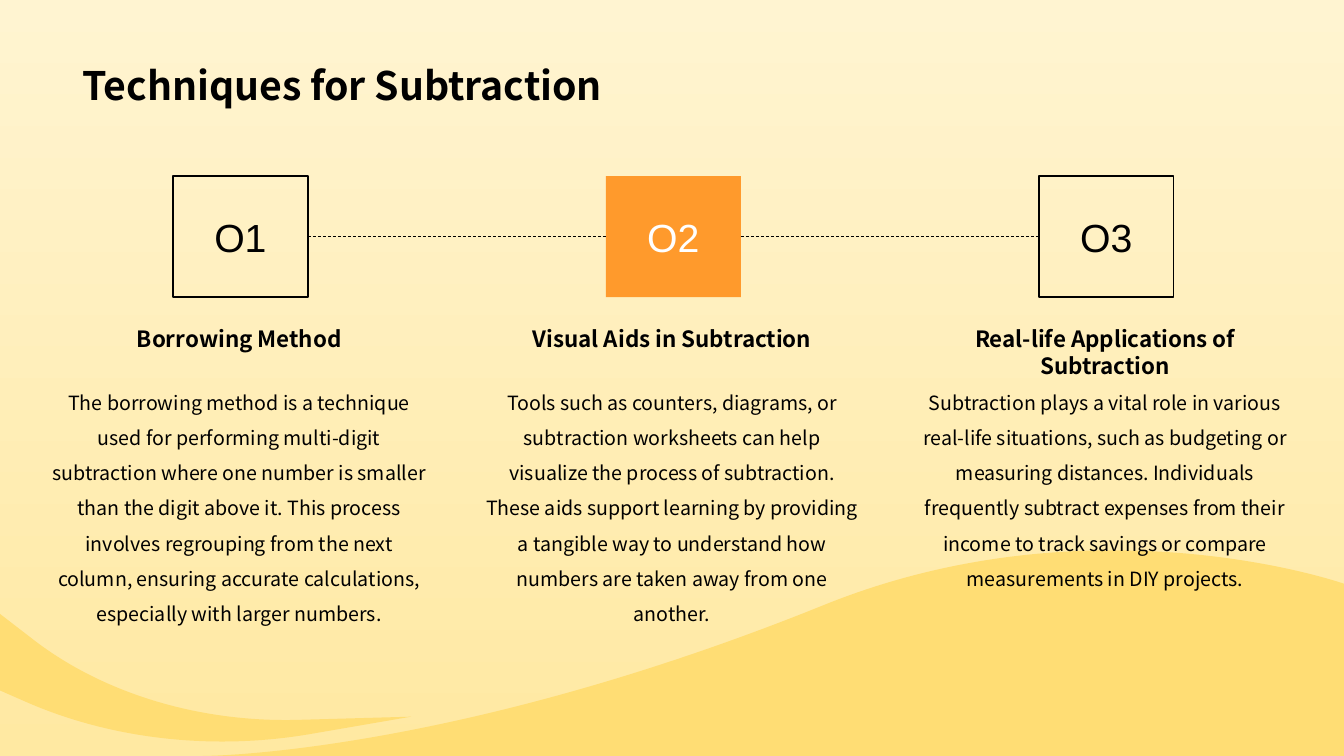
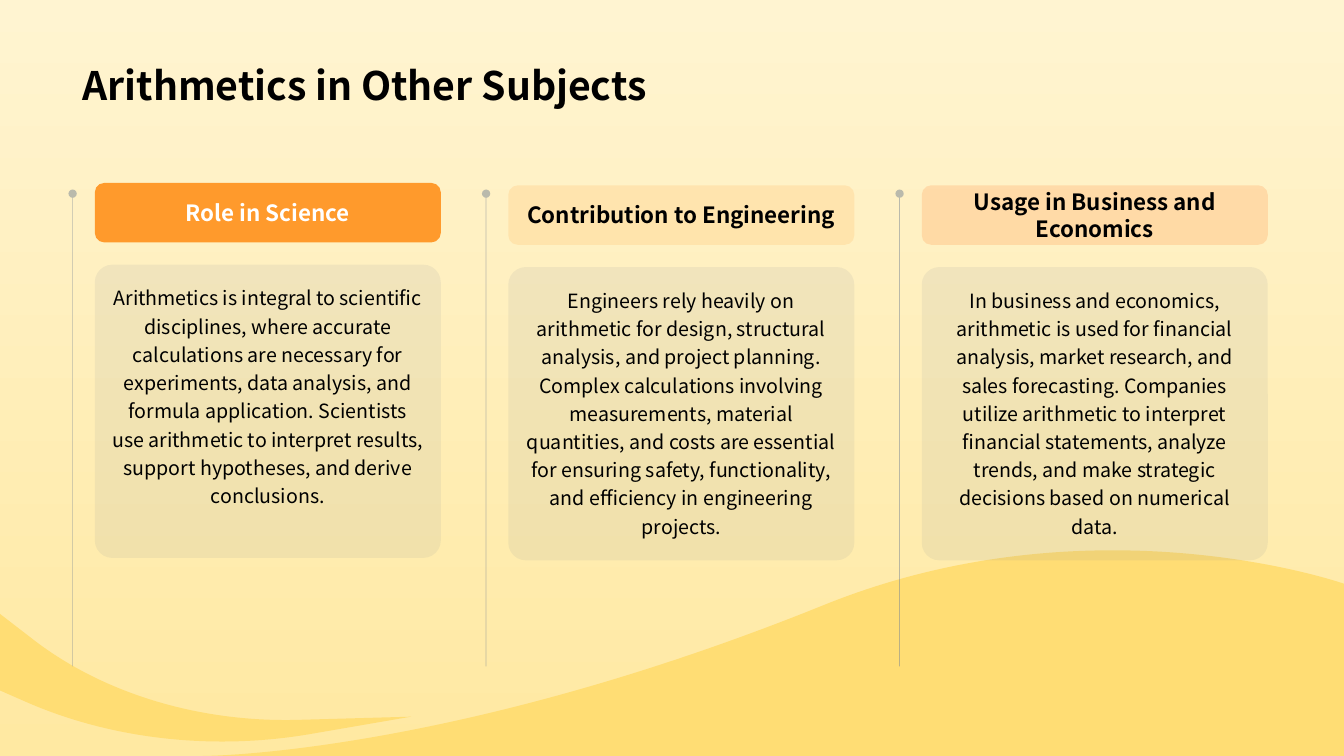
from pptx import Presentation
from pptx.dml.color import RGBColor
from pptx.enum.dml import MSO_LINE
from pptx.enum.shapes import MSO_CONNECTOR, MSO_SHAPE
from pptx.enum.text import MSO_ANCHOR, MSO_AUTO_SIZE, PP_ALIGN
from pptx.oxml.ns import qn
from pptx.util import Cm, Pt
from lxml.etree import SubElement

# Colours and text formats
BLACK = RGBColor(0x00, 0x00, 0x00)
WHITE = RGBColor(0xFF, 0xFF, 0xFF)
ORANGE = RGBColor(0xFF, 0x9A, 0x2C)
RED_ORANGE = RGBColor(0xFF, 0x59, 0x00)
SLATE = RGBColor(0x77, 0x84, 0x95)
WAVE = RGBColor(0xFF, 0xDD, 0x74)
SKY_BOTTOM = RGBColor(0xFF, 0xE9, 0xA2)
SKY_TOP = RGBColor(0xFF, 0xF4, 0xD1)

SANS = "Noto Sans CJK SC"
TITLE = {"name": SANS, "size": Pt(28), "bold": True}
NUMBER = {"name": "Arial", "size": Pt(28), "bold": False}
HEADING = {"name": SANS, "size": Pt(16), "bold": True}
BODY = {"name": SANS, "size": Pt(14), "bold": False}

# Content: heading, text, number, number box fill
TECHNIQUES_TITLE = "Techniques for Subtraction"
TECHNIQUES = [
    ("Borrowing Method",
     "The borrowing method is a technique used for performing multi-digit "
     "subtraction where one number is smaller than the digit above it. This "
     "process involves regrouping from the next column, ensuring accurate "
     "calculations, especially with larger numbers.", "O1", None),
    ("Visual Aids in Subtraction",
     "Tools such as counters, diagrams, or subtraction worksheets can help "
     "visualize the process of subtraction. These aids support learning by "
     "providing a tangible way to understand how numbers are taken away from "
     "one another.", "O2", ORANGE),
    ("Real-life Applications of Subtraction",
     "Subtraction plays a vital role in various real-life situations, such as "
     "budgeting or measuring distances. Individuals frequently subtract "
     "expenses from their income to track savings or compare measurements in "
     "DIY projects.", "O3", None),
]

# Content: heading, text, header fill, opacity in percent, text colour, upward shift
SUBJECTS_TITLE = "Arithmetics in Other Subjects"
SUBJECTS = [
    ("Role in Science",
     "Arithmetics is integral to scientific disciplines, where accurate "
     "calculations are necessary for experiments, data analysis, and formula "
     "application. Scientists use arithmetic to interpret results, support "
     "hypotheses, and derive conclusions.", ORANGE, 100, WHITE, 0.06),
    ("Contribution to Engineering",
     "Engineers rely heavily on arithmetic for design, structural analysis, "
     "and project planning. Complex calculations involving measurements, "
     "material quantities, and costs are essential for ensuring safety, "
     "functionality, and efficiency in engineering projects.",
     ORANGE, 15, BLACK, 0),
    ("Usage in Business and Economics",
     "In business and economics, arithmetic is used for financial analysis, "
     "market research, and sales forecasting. Companies utilize arithmetic to "
     "interpret financial statements, analyze trends, and make strategic "
     "decisions based on numerical data.", RED_ORANGE, 15, BLACK, 0),
]

# Waves in cm: frame, then outline (a pair ends a line, six values make a curve)
WAVES = [
    ((5.11, 13.87, 28.76, 5.18),
     [(20.78, 15.24), (27.58, 12.5, 33.87, 14.71, 33.87, 14.71),
      (33.87, 19.05), (5.11, 19.05),
      (5.11, 19.05, 11.35, 19.05, 20.78, 15.24)]),
    ((0, 15.47, 10.36, 3.23),
     [(0, 15.47), (0.79, 16.08), (2.54, 17.45, 4.98, 18.21, 7.52, 18.14),
      (10.36, 18.06), (7.87, 18.49), (5.41, 18.92, 2.82, 18.64, 0.64, 17.68),
      (0, 17.4), (0, 15.47)]),
]


def add_wave(page, frame, outline):
    """A freeform whose six-value parts become cubic curves."""
    ends = [(Cm(part[-2]), Cm(part[-1])) for part in outline]
    builder = page.shapes.build_freeform(*ends[0])
    builder.add_line_segments(ends[1:], close=True)
    wave = builder.convert_to_shape()
    style_shape(wave, fill=WAVE)
    for name, value in zip(("left", "top", "width", "height"), frame):
        setattr(wave, name, Cm(value))

    geometry = next(wave.element.iter(qn("a:path")))
    for child in list(geometry):
        geometry.remove(child)
    geometry.set("w", str(wave.width))
    geometry.set("h", str(wave.height))
    for index, part in enumerate(outline):
        tag = "a:moveTo" if index == 0 else "a:lnTo" if len(part) == 2 else "a:cubicBezTo"
        step = SubElement(geometry, qn(tag))
        for x, y in zip(part[::2], part[1::2]):
            SubElement(step, qn("a:pt"), x=str(Cm(x) - wave.left), y=str(Cm(y) - wave.top))
    SubElement(geometry, qn("a:close"))
    return wave


def set_opacity(shape, percent):
    for color in shape.element.spPr.iter(qn("a:srgbClr")):
        SubElement(color, qn("a:alpha"), val=str(percent * 1000))


def style_shape(shape, fill=None, opacity=100, line=None):
    shape.shadow.inherit = False
    if fill is None:
        shape.fill.background()
    else:
        shape.fill.solid()
        shape.fill.fore_color.rgb = fill
    if line is None:
        shape.line.fill.background()
    else:
        shape.line.color.rgb = line
        shape.line.width = Pt(1)
    if opacity < 100:
        set_opacity(shape, opacity)


def write(shape, text, style, color=BLACK, align=PP_ALIGN.CENTER,
          spacing=None, **frame_format):
    frame = shape.text_frame
    for name, value in {"word_wrap": True, **frame_format}.items():
        setattr(frame, name, value)
    para = frame.paragraphs[0]
    para.alignment = align
    para.line_spacing = spacing
    span = para.add_run()
    span.text = text
    for name, value in style.items():
        setattr(span.font, name, value)
    span.font.color.rgb = color


def add_text(page, place, text, style, **options):
    box = page.shapes.add_textbox(*map(Cm, place))
    write(box, text, style, **options)


def add_box(page, kind, place, rounding=None, **look):
    box = page.shapes.add_shape(kind, *map(Cm, place))
    if rounding is not None:
        box.adjustments[0] = rounding
    style_shape(box, **look)
    return box


def add_line(page, ends, color):
    line = page.shapes.add_connector(MSO_CONNECTOR.STRAIGHT, *map(Cm, ends))
    line.line.color.rgb = color
    line.line.width = Pt(0.5)
    SubElement(line.element.spPr, qn("a:effectLst"))
    return line


def add_page(deck, title):
    page = deck.slides.add_slide(deck.slide_layouts[6])
    add_text(page, (1.83, 0.36, 30.18, 2.49), title, TITLE,
             align=PP_ALIGN.LEFT, vertical_anchor=MSO_ANCHOR.BOTTOM)
    return page


def add_techniques(deck):
    page = add_page(deck, TECHNIQUES_TITLE)
    pitch, text_left, text_width = 10.91, 1, 10.06
    box_left, box_top, box_width, box_height = 4.36, 4.44, 3.4, 3.05
    boxes = []
    for column, (heading, text, number, fill) in enumerate(TECHNIQUES):
        shift = column * pitch
        box = add_box(page, MSO_SHAPE.RECTANGLE,
                      (box_left + shift, box_top, box_width, box_height),
                      fill=fill, line=None if fill else BLACK)
        write(box, number, NUMBER, color=WHITE if fill else BLACK,
              vertical_anchor=MSO_ANCHOR.MIDDLE)
        boxes.append(box)
        for top, height, words, style, spacing in (
                (8.08, 0.94, heading, HEADING, None),
                (9.42, 2.84, text, BODY, 1.5)):
            add_text(page, (text_left + shift, top, text_width, height), words,
                     style, spacing=spacing,
                     auto_size=MSO_AUTO_SIZE.SHAPE_TO_FIT_TEXT)

    # Dashed links between neighbouring number boxes
    for first, second in zip(boxes, boxes[1:]):
        link = add_line(page, (0, 0, 0, 0), BLACK)
        link.begin_connect(first, 3)
        link.end_connect(second, 1)
        link.line.dash_style = MSO_LINE.DASH


def add_subjects(deck):
    page = add_page(deck, SUBJECTS_TITLE)
    pitch, line_left, card_left, card_width = 10.42, 1.83, 2.39, 8.72
    inset = {f"margin_{side}": Cm(0.3) for side in ("left", "top", "right", "bottom")}
    for column, (heading, text, fill, opacity, color, lift) in enumerate(SUBJECTS):
        shift = column * pitch
        left = card_left + shift

        # Pin to the left of the card
        x = line_left + shift
        pin = add_line(page, (x, 4.88, x, 16.79), SLATE)
        set_opacity(pin, 50)
        SubElement(pin.element.spPr.find(qn("a:ln")), qn("a:headEnd"), type="oval")

        # Panel and header
        panel = add_box(page, MSO_SHAPE.ROUNDED_RECTANGLE,
                        (left, 6.73 - lift, card_width, 7.39), 0.06,
                        fill=SLATE, opacity=10)
        write(panel, text, BODY, spacing=1.2, vertical_anchor=MSO_ANCHOR.TOP, **inset)
        header = add_box(page, MSO_SHAPE.ROUNDED_RECTANGLE,
                         (left, 4.67 - lift, card_width, 1.5), 0.16,
                         fill=fill, opacity=opacity)
        write(header, heading, HEADING, color=color,
              vertical_anchor=MSO_ANCHOR.MIDDLE, **inset)


def share_backdrop(deck):
    """Gradient on the master, waves on the blank layout."""
    sky = deck.slide_master.background.fill
    sky.gradient()
    sky.gradient_angle = 90
    for stop, color in zip(sky.gradient_stops, (SKY_BOTTOM, SKY_TOP)):
        stop.color.rgb = color

    # Waves are built on a page, then moved to its layout
    page = deck.slides[0]
    for number, (frame, outline) in enumerate(WAVES, start=20):
        wave = add_wave(page, frame, outline).element
        next(wave.iter(qn("p:cNvPr"))).set("id", str(number))
        page.slide_layout.shapes.element.append(wave)


def main():
    deck = Presentation()
    deck.slide_width, deck.slide_height = Cm(33.87), Cm(19.05)
    add_techniques(deck)
    add_subjects(deck)
    share_backdrop(deck)
    deck.save("out.pptx")


if __name__ == "__main__":
    main()
